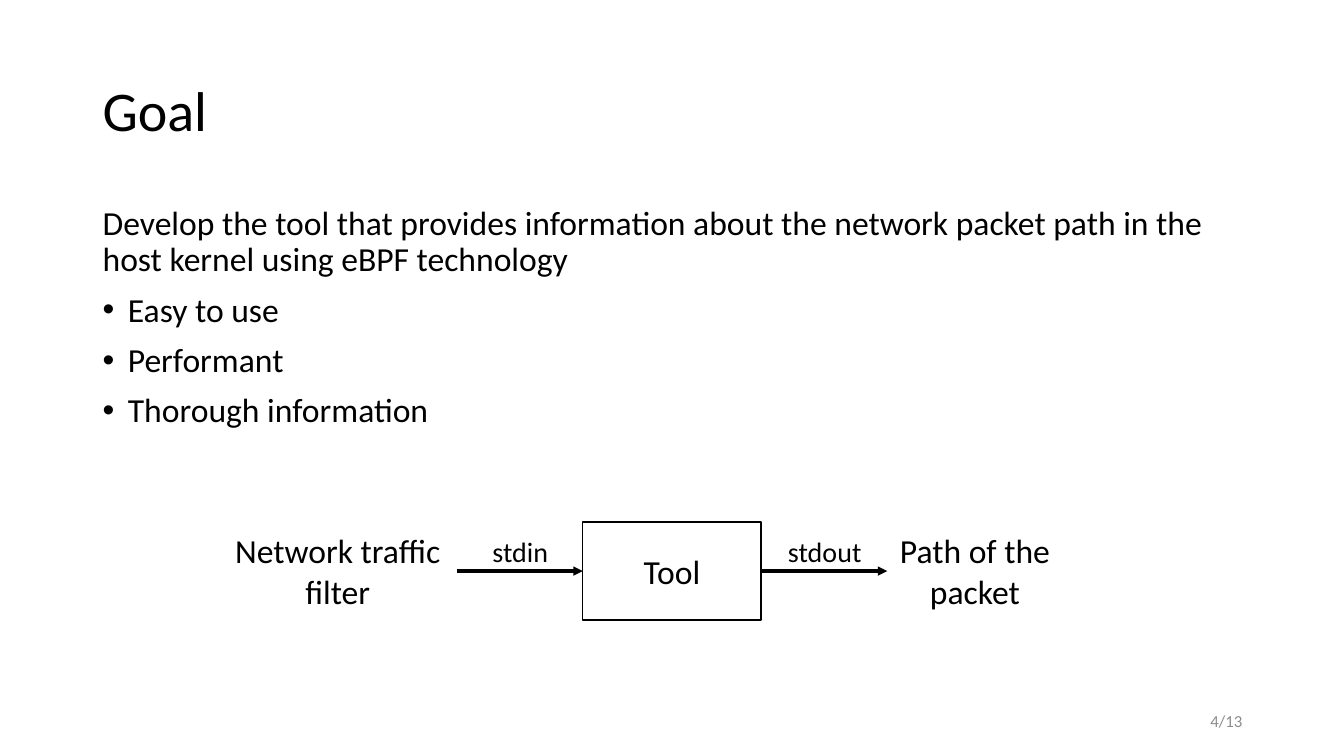
from dataclasses import dataclass

from lxml import etree
from pptx import Presentation
from pptx.dml.color import RGBColor
from pptx.enum import shapes, text
from pptx.oxml import ns
from pptx.util import Inches, Pt


@dataclass(frozen=True)
class Theme:
    font: str = "Calibri"
    ink: RGBColor = RGBColor(0, 0, 0)
    paper: RGBColor = RGBColor(255, 255, 255)
    muted: RGBColor = RGBColor(0x8C, 0x8C, 0x8C)
    title: int = 40
    body: int = 24
    label: int = 20
    footer: int = 12


THEME = Theme()
LEFT, CENTER, RIGHT = text.PP_ALIGN.LEFT, text.PP_ALIGN.CENTER, text.PP_ALIGN.RIGHT
TOP, MIDDLE = text.MSO_ANCHOR.TOP, text.MSO_ANCHOR.MIDDLE


def style(p, size, align=LEFT, color=THEME.ink):
    p.alignment = align
    p.font.name = THEME.font
    p.font.size = Pt(size)
    p.font.color.rgb = color


def add_text(s, box, lines, size, align=LEFT, anchor=TOP, color=THEME.ink):
    tf = s.shapes.add_textbox(*map(Inches, box)).text_frame
    tf.word_wrap = True
    tf.vertical_anchor = anchor
    tf.text = "\n".join(lines)
    for p in tf.paragraphs:
        style(p, size, align, color)
    return tf


def add_bullet(p):
    pPr = p._p.get_or_add_pPr()
    pPr.set("marL", str(Inches(0.25)))
    pPr.set("indent", str(-Inches(0.25)))
    bullet_font = etree.Element(ns.qn("a:buFont"), typeface="Arial")
    bullet = etree.Element(ns.qn("a:buChar"), char="•")
    defaults = pPr.find(ns.qn("a:defRPr"))
    defaults.addprevious(bullet_font)
    defaults.addprevious(bullet)


def add_box(s, box, label):
    sp = s.shapes.add_shape(shapes.MSO_SHAPE.RECTANGLE, *map(Inches, box))
    sp.shadow.inherit = False
    sp.fill.solid()
    sp.fill.fore_color.rgb = THEME.paper
    sp.line.color.rgb = THEME.ink
    sp.line.width = Pt(1)
    tf = sp.text_frame
    tf.vertical_anchor = MIDDLE
    tf.text = label
    style(tf.paragraphs[0], THEME.body, CENTER)
    return sp


def add_arrow(s, x1, x2, y):
    line = s.shapes.add_connector(
        shapes.MSO_CONNECTOR.STRAIGHT, Inches(x1), Inches(y), Inches(x2), Inches(y))
    line.line.color.rgb = THEME.ink
    line.line.width = Pt(2.25)
    etree.SubElement(line.line._get_or_add_ln(), ns.qn("a:tailEnd"), type="triangle")
    etree.SubElement(line._element.spPr, ns.qn("a:effectLst"))
    return line


def add_flow(s):
    # Tool with its input and output
    left, top, width, height = 5.78, 5.18, 1.77, 0.97
    right, middle, reach = left + width, top + height / 2, 1.25
    tool = add_box(s, (left, top, width, height), "Tool")

    for x, label in ((2.17, "Network traffic filter"), (8.49, "Path of the packet")):
        add_text(s, (x, 5.21, 2.36, 0.91), [label], THEME.body, CENTER)

    add_arrow(s, left - reach, left, middle).end_connect(tool, 1)
    add_arrow(s, right, right + reach, middle).begin_connect(tool, 3)

    for start, label in ((left - reach, "stdin"), (right, "stdout")):
        add_text(s, (start + 0.1, 5.25, 1.06, 0.44), [label], THEME.label, CENTER)


def main():
    prs = Presentation()
    prs.slide_width, prs.slide_height = Inches(13.33), Inches(7.5)
    s = prs.slides.add_slide(prs.slide_layouts[6])

    # Title
    tf = add_text(s, (0.92, 0.4, 11.5, 1.45), ["Goal"], THEME.title, anchor=MIDDLE)
    tf.paragraphs[0].line_spacing = 0.9

    # Goal statement and its qualities
    tf = add_text(s, (0.92, 2, 11.5, 4.76), [
        "Develop the tool that provides information about the network packet path "
        "in the host kernel using eBPF technology",
        "Easy to use",
        "Performant",
        "Thorough information",
    ], THEME.body)
    for p in tf.paragraphs:
        p.line_spacing = 0.9
        p.space_before = Pt(10)
    for p in tf.paragraphs[1:]:
        add_bullet(p)

    add_flow(s)

    # Page number
    add_text(s, (9.42, 6.95, 3, 0.4), ["4/13"], THEME.footer, RIGHT, MIDDLE, THEME.muted)

    prs.save("out.pptx")


if __name__ == "__main__":
    main()
